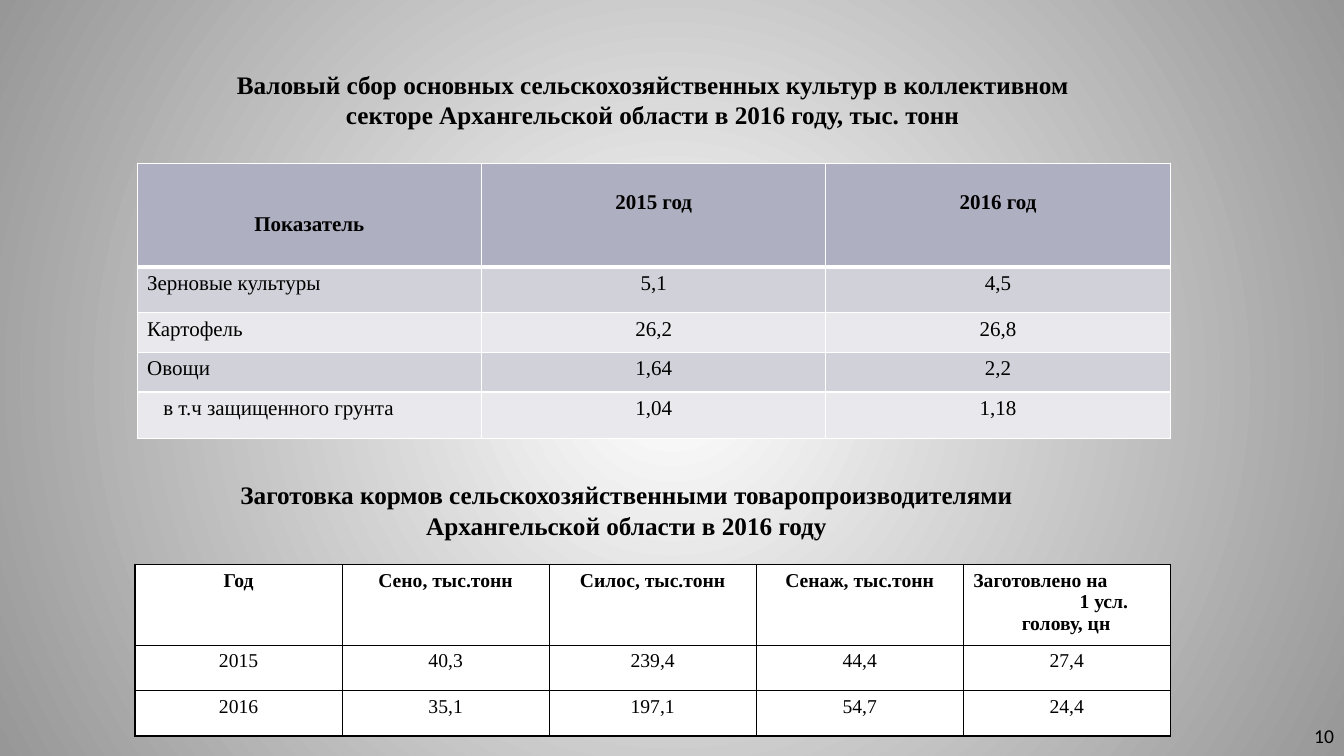
"""Build a slide with two tables on crop harvest and fodder supply."""
import pptx
import pptx.dml.color
import pptx.enum.text
import pptx.oxml
import pptx.oxml.ns
import pptx.util

COLORS = {"ink": "000000", "paper": "FFFFFF", "edge": "979797",
          "head": "AEB0C1", "dark": "D1D1DA", "light": "E9E9ED"}
ALIGN = pptx.enum.text.PP_ALIGN
ANCHOR = pptx.enum.text.MSO_ANCHOR
SERIF = "Times New Roman"

CROPS = [["Показатель", "2015 год", "2016 год"],
         ["Зерновые культуры", "5,1", "4,5"],
         ["Картофель", "26,2", "26,8"],
         ["Овощи", "1,64", "2,2"],
         ["в т.ч защищенного грунта", "1,04", "1,18"]]
FODDER = [["Год", "Сено, тыс.тонн", "Силос, тыс.тонн", "Сенаж, тыс.тонн",
           "Заготовлено на\n1 усл.\nголову, цн"],
          ["2015", "40,3", "239,4", "44,4", "27,4"],
          ["2016", "35,1", "197,1", "54,7", "24,4"]]


def rgb(name):
    return pptx.dml.color.RGBColor.from_string(COLORS[name])


class SlideBuilder:
    def __init__(self, deck):
        self.page = deck.slides.add_slide(deck.slide_layouts[5])
        self.column = deck.slide_width / 100
        self.row = deck.slide_height / 100

    def place(self, left, top, width, height):
        return (round(left * self.column), round(top * self.row),
                round(width * self.column), round(height * self.row))

    def background(self):
        fill = self.page.background.fill
        fill.gradient()
        for stop, name in zip(fill.gradient_stops, ("paper", "edge")):
            stop.color.rgb = rgb(name)
        linear = next(self.page.element.iter(pptx.oxml.ns.qn("a:lin")))
        linear.getparent().replace(linear, pptx.oxml.parse_xml(
            f'<a:path {pptx.oxml.ns.nsdecls("a")} path="circle">'
            '<a:fillToRect l="50000" t="50000" r="50000" b="50000"/></a:path>'))

    def set_text(self, frame, text, size, align=ALIGN.CENTER, bold=False, font=SERIF):
        frame.text = text
        for para in frame.paragraphs:
            para.alignment = align
            para.font.name = font
            para.font.size = pptx.util.Pt(size)
            para.font.bold = bold
            para.font.color.rgb = rgb("ink")

    def title(self, text, area):
        box = self.page.shapes.title
        box.left, box.top, box.width, box.height = self.place(*area)
        box.text_frame.auto_size = pptx.enum.text.MSO_AUTO_SIZE.NONE
        box.text_frame.vertical_anchor = ANCHOR.MIDDLE
        self.set_text(box.text_frame, text, 18, bold=True)

    def text(self, text, area, size, anchor=ANCHOR.TOP, **style):
        frame = self.page.shapes.add_textbox(*self.place(*area)).text_frame
        frame.word_wrap = True
        frame.vertical_anchor = anchor
        self.set_text(frame, text, size, **style)

    def border(self, cell, side, color, width):
        cell._tc.get_or_add_tcPr().append(pptx.oxml.parse_xml(
            f'<a:ln{side} {pptx.oxml.ns.nsdecls("a")} w="{pptx.util.Pt(width)}">'
            f'<a:solidFill><a:srgbClr val="{COLORS[color]}"/></a:solidFill></a:ln{side}>'))

    def table(self, values, left, top, width, heights, size, fills, line,
              rule=1, first=ALIGN.CENTER):
        area = self.place(left, top, width, sum(heights))
        table = self.page.shapes.add_table(len(values), len(values[0]), *area).table
        table.horz_banding = False
        for r, texts in enumerate(values):
            table.rows[r].height = round(heights[r] * self.row)
            for c, text in enumerate(texts):
                cell = table.cell(r, c)
                align = first if r and not c else ALIGN.CENTER
                self.set_text(cell.text_frame, text, size, align, bold=r == 0)
                for side in "LRTB":
                    heavy = (r, side) in ((0, "B"), (1, "T"))
                    self.border(cell, side, line, rule if heavy else 1)
                cell.fill.solid()
                cell.fill.fore_color.rgb = rgb(fills[r])
        return table

    def indent_lines(self, cell, indents):
        for para, indent in zip(cell.text_frame.paragraphs, indents):
            para.alignment = ALIGN.LEFT
            para._p.get_or_add_pPr().set("marL", str(round(indent * self.column)))


def main():
    deck = pptx.Presentation()
    deck.slide_width = pptx.util.Inches(13.33)
    deck.slide_height = pptx.util.Inches(7.5)
    slide = SlideBuilder(deck)
    slide.background()
    slide.title("Валовый сбор основных сельскохозяйственных культур в коллективном "
                "секторе Архангельской области в 2016 году, тыс. тонн",
                (15.23, 8, 66.68, 10.4))
    crops = slide.table(CROPS, 10.2, 21.6, 76.88, [13.73, 6, 5.27, 5.27, 6.13], 15,
                        ["head", "dark", "light", "dark", "light"], "paper",
                        rule=3, first=ALIGN.LEFT)
    for c, drop in enumerate((6.6, 3.6, 3.6)):
        crops.cell(0, c).margin_top = round(drop * slide.row)
    slide.indent_lines(crops.cell(4, 0), [1.2])
    slide.text("Заготовка кормов сельскохозяйственными товаропроизводителями "
               "Архангельской области в 2016 году",
               (15.23, 62.8, 62.78, 9.47), 18, bold=True)
    fodder = slide.table(FODDER, 10.05, 74.67, 77.03, [10.67, 6, 6], 14,
                         ["paper"] * 3, "ink")
    slide.indent_lines(fodder.cell(0, 4), [0, 7.9, 3.6])
    slide.text("10", (76.67, 94.67, 23.33, 5.33), 14, ANCHOR.MIDDLE,
               align=ALIGN.RIGHT, font="Calibri")
    deck.save("out.pptx")


if __name__ == "__main__":
    main()
